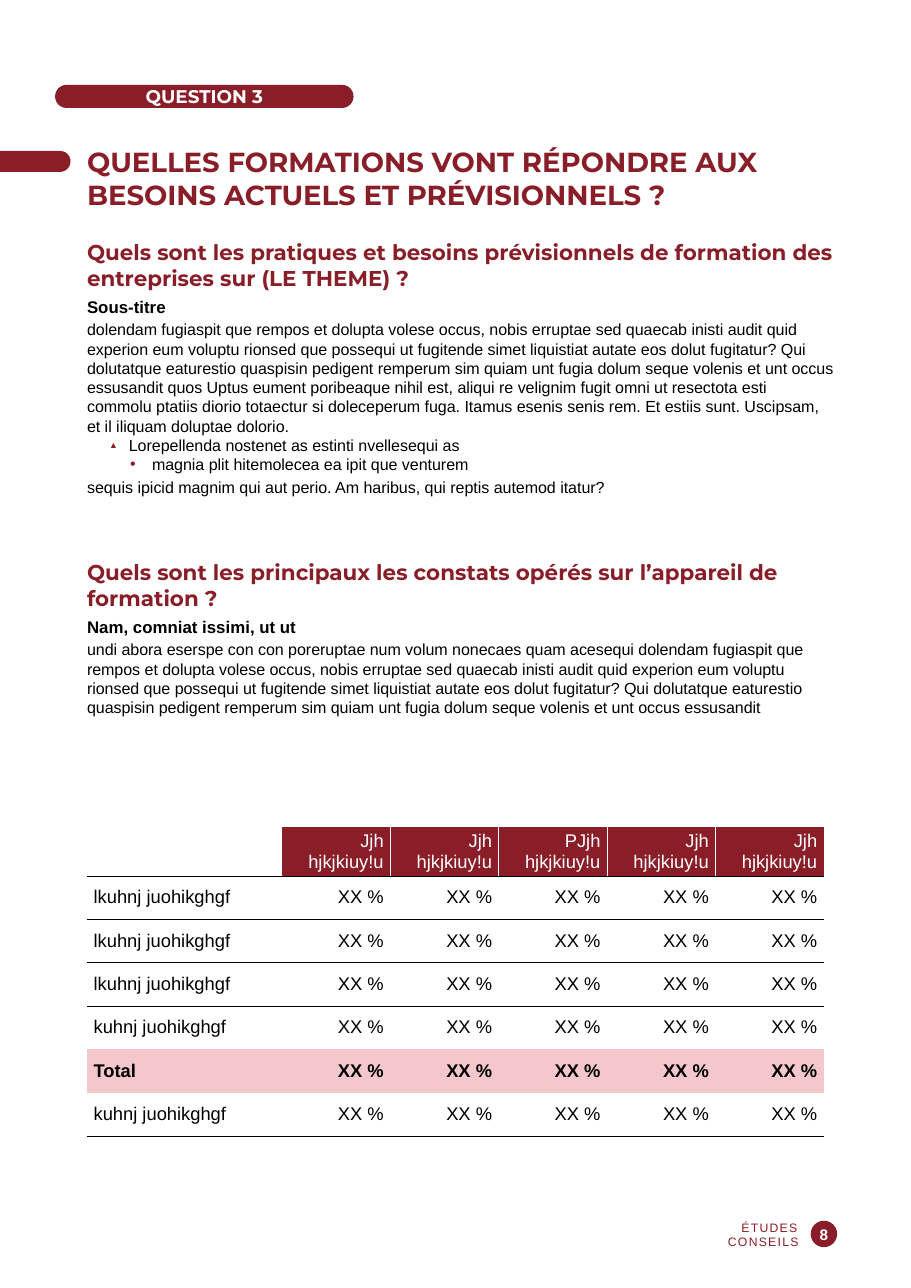
import pptx
import pptx.util
import pptx.dml.color
import pptx.enum.shapes
import pptx.enum.text
import pptx.oxml.ns
from lxml import etree

WIDTH, HEIGHT, MARGIN = 8.27, 11.69, 0.79
RED, PINK, BLACK, WHITE = "891E28", "F3C7CB", "000000", "FFFFFF"
NO_STYLE = "{2D5ABB26-0587-4C30-8999-92F81FD0307C}"

STYLES = {
    "title": dict(size=18, font="Montserrat", color=RED, bold=True, after=6),
    "heading": dict(size=14, font="Montserrat", color=RED, bold=True, before=12),
    "next heading": dict(size=14, font="Montserrat", color=RED, bold=True, before=41),
    "subtitle": dict(size=11, bold=True, before=4),
    "text": dict(size=10.5, before=2),
    "bullet 1": dict(size=10.5, bullet="▲", bullet_size=55, indent=(0.38, -0.18)),
    "bullet 2": dict(size=10.5, bullet="•", bullet_size=100, indent=(0.59, -0.2)),
}
BODY = [
    ("title", "QUELLES FORMATIONS VONT RÉPONDRE AUX BESOINS ACTUELS ET PRÉVISIONNELS ?"),
    ("heading", "Quels sont les pratiques et besoins prévisionnels de formation des "
                "entreprises sur (LE THEME) ?"),
    ("subtitle", "Sous-titre"),
    ("text", "dolendam fugiaspit que rempos et dolupta volese occus, nobis erruptae sed quaecab "
             "inisti audit quid experion eum voluptu rionsed que possequi ut fugitende simet "
             "liquistiat autate eos dolut fugitatur? Qui dolutatque eaturestio quaspisin pedigent "
             "remperum sim quiam unt fugia dolum seque volenis et unt occus essusandit quos Uptus "
             "eument poribeaque nihil est, aliqui re velignim fugit omni ut resectota esti commolu "
             "ptatiis diorio totaectur si doleceperum fuga. Itamus esenis senis rem. Et estiis "
             "sunt. Uscipsam, et il iliquam doluptae dolorio."),
    ("bullet 1", "Lorepellenda nostenet as estinti nvellesequi as"),
    ("bullet 2", "magnia plit hitemolecea ea ipit que venturem"),
    ("text", "sequis ipicid magnim qui aut perio. Am haribus, qui reptis autemod itatur?"),
    ("next heading", "Quels sont les principaux les constats opérés sur l’appareil de formation ?"),
    ("subtitle", "Nam, comniat issimi, ut ut"),
    ("text", "undi abora eserspe con con poreruptae num volum nonecaes quam acesequi dolendam "
             "fugiaspit que rempos et dolupta volese occus, nobis erruptae sed quaecab inisti "
             "audit quid experion eum voluptu rionsed que possequi ut fugitende simet liquistiat "
             "autate eos dolut fugitatur? Qui dolutatque eaturestio quaspisin pedigent remperum "
             "sim quiam unt fugia dolum seque volenis et unt occus essusandit"),
]
HEADERS = ["Jjh", "Jjh", "PJjh", "Jjh", "Jjh"]
HEADER_UNIT = "hjkjkiuy!u"
ROW_LABELS = ["lkuhnj juohikghgf"] * 3 + ["kuhnj juohikghgf", "Total", "kuhnj juohikghgf"]
VALUE = "XX %"
RULED_ROWS = (0, 1, 2, 3, 6)
TABLE_TOP, TABLE_WIDTH, TABLE_HEIGHT = 7.51, 6.69, 2.8
LABEL_WIDTH, HEADER_HEIGHT, CELL_PAD = 1.77, 0.44, 0.06

SHAPE = pptx.enum.shapes.MSO_SHAPE
ALIGN = pptx.enum.text.PP_ALIGN
MIDDLE = pptx.enum.text.MSO_ANCHOR.MIDDLE
inch = pptx.util.Inches


def rgb(color):
    return pptx.dml.color.RGBColor.from_string(color)


def add_xml(parent, tag, **attributes):
    return etree.SubElement(parent, pptx.oxml.ns.qn(tag), attributes)


def write(tf, text, size=12, font="Arial", color=BLACK, bold=False, align=ALIGN.LEFT,
          before=0, after=0, bullet=None, bullet_size=100, indent=None, spacing=None):
    """Fill the empty first paragraph of tf, or add a paragraph after the others."""
    p = tf.paragraphs[0] if not tf.text else tf.add_paragraph()
    p.alignment = align
    p.space_before, p.space_after = pptx.util.Pt(before), pptx.util.Pt(after)
    if bullet:
        pPr = p._p.get_or_add_pPr()
        pPr.set("marL", str(inch(indent[0])))
        pPr.set("indent", str(inch(indent[1])))
        add_xml(add_xml(pPr, "a:buClr"), "a:srgbClr", val=RED)
        add_xml(pPr, "a:buSzPct", val=str(bullet_size * 1000))
        add_xml(pPr, "a:buFont", typeface="Arial")
        add_xml(pPr, "a:buChar", char=bullet)
    r = p.add_run()
    r.text = text
    r.font.size, r.font.name, r.font.bold = pptx.util.Pt(size), font, bold
    r.font.color.rgb = rgb(color)
    if spacing:
        r._r.get_or_add_rPr().set("spc", str(spacing))


def clear_margins(frame):
    frame.margin_left = frame.margin_right = frame.margin_top = frame.margin_bottom = 0


def add_red_shape(slide, kind, left, top, width, height):
    sp = slide.shapes.add_shape(kind, inch(left), inch(top), inch(width), inch(height))
    sp.shadow.inherit = False
    sp.fill.solid()
    sp.fill.fore_color.rgb = rgb(RED)
    sp.line.fill.background()
    clear_margins(sp.text_frame)
    sp.text_frame.vertical_anchor = MIDDLE
    return sp


def add_text_box(slide, left, top, width, height):
    tf = slide.shapes.add_textbox(inch(left), inch(top), inch(width), inch(height)).text_frame
    clear_margins(tf)
    tf.word_wrap = True
    return tf


def add_border(cell, side, color):
    ln = add_xml(cell._tc.get_or_add_tcPr(), "a:ln" + side, w=str(pptx.util.Pt(0.5)))
    add_xml(add_xml(ln, "a:solidFill"), "a:srgbClr", val=color)


def format_cell(cell, row, col, last_col):
    clear_margins(cell)
    cell.vertical_anchor = MIDDLE
    if col:
        cell.margin_right = inch(CELL_PAD)
    else:
        cell.margin_left = inch(CELL_PAD)
    header = row == 0 and col > 0
    total = row > 0 and ROW_LABELS[row - 1] == "Total"
    if header and col > 1:
        add_border(cell, "L", WHITE)
    if header and col < last_col:
        add_border(cell, "R", WHITE)
    if row in RULED_ROWS:
        add_border(cell, "B", BLACK)
    if header or total:
        cell.fill.solid()
        cell.fill.fore_color.rgb = rgb(RED if header else PINK)
    else:
        cell.fill.background()

    if header:
        for line in (HEADERS[col - 1], HEADER_UNIT):
            write(cell.text_frame, line, color=WHITE, align=ALIGN.RIGHT)
    elif row:
        write(cell.text_frame, VALUE if col else ROW_LABELS[row - 1], bold=total,
              align=ALIGN.RIGHT if col else ALIGN.LEFT)


def add_results_table(slide):
    rows, cols = len(ROW_LABELS) + 1, len(HEADERS) + 1
    table = slide.shapes.add_table(rows, cols, inch(MARGIN), inch(TABLE_TOP),
                                   inch(TABLE_WIDTH), inch(TABLE_HEIGHT)).table
    table.first_row = table.horz_banding = False
    table._tbl.tblPr.find(pptx.oxml.ns.qn("a:tableStyleId")).text = NO_STYLE
    for i, column in enumerate(table.columns):
        column.width = inch((TABLE_WIDTH - LABEL_WIDTH) / (cols - 1) if i else LABEL_WIDTH)
    for i, row in enumerate(table.rows):
        row.height = inch((TABLE_HEIGHT - HEADER_HEIGHT) / (rows - 1) if i else HEADER_HEIGHT)
        for j, cell in enumerate(row.cells):
            format_cell(cell, i, j, cols - 1)


def main():
    prs = pptx.Presentation()
    prs.slide_width, prs.slide_height = inch(WIDTH), inch(HEIGHT)
    slide = prs.slides.add_slide(prs.slide_layouts[6])

    page_number = add_red_shape(slide, SHAPE.OVAL, 7.36, 11.08, 0.24, 0.24).text_frame
    page_number.word_wrap = False
    write(page_number, "8", size=10, color=WHITE, bold=True, align=ALIGN.CENTER)
    footer = add_text_box(slide, 6.08, 11.07, 1.17, 0.27)
    footer.vertical_anchor = MIDDLE
    write(footer, "ÉTUDES CONSEILS", size=8, color=RED, align=ALIGN.RIGHT, spacing=80)

    tab_length, tab_height, tab_top = 0.64, 0.19, 1.37
    tab = add_red_shape(slide, SHAPE.ROUND_2_SAME_RECTANGLE, (tab_length - tab_height) / 2,
                        tab_top - (tab_length - tab_height) / 2, tab_height, tab_length)
    tab.adjustments[0] = 0.5
    tab.rotation = 90

    question = add_red_shape(slide, SHAPE.ROUNDED_RECTANGLE, 0.5, 0.77, 2.71, 0.21)
    question.adjustments[0] = 0.5
    write(question.text_frame, "QUESTION 3", font="Montserrat", color=WHITE, bold=True,
          align=ALIGN.CENTER)

    body = add_text_box(slide, MARGIN, 1.32, 6.79, 9.57)
    for style, text in BODY:
        write(body, text, **STYLES[style])
    add_results_table(slide)
    prs.save("out.pptx")


if __name__ == "__main__":
    main()
